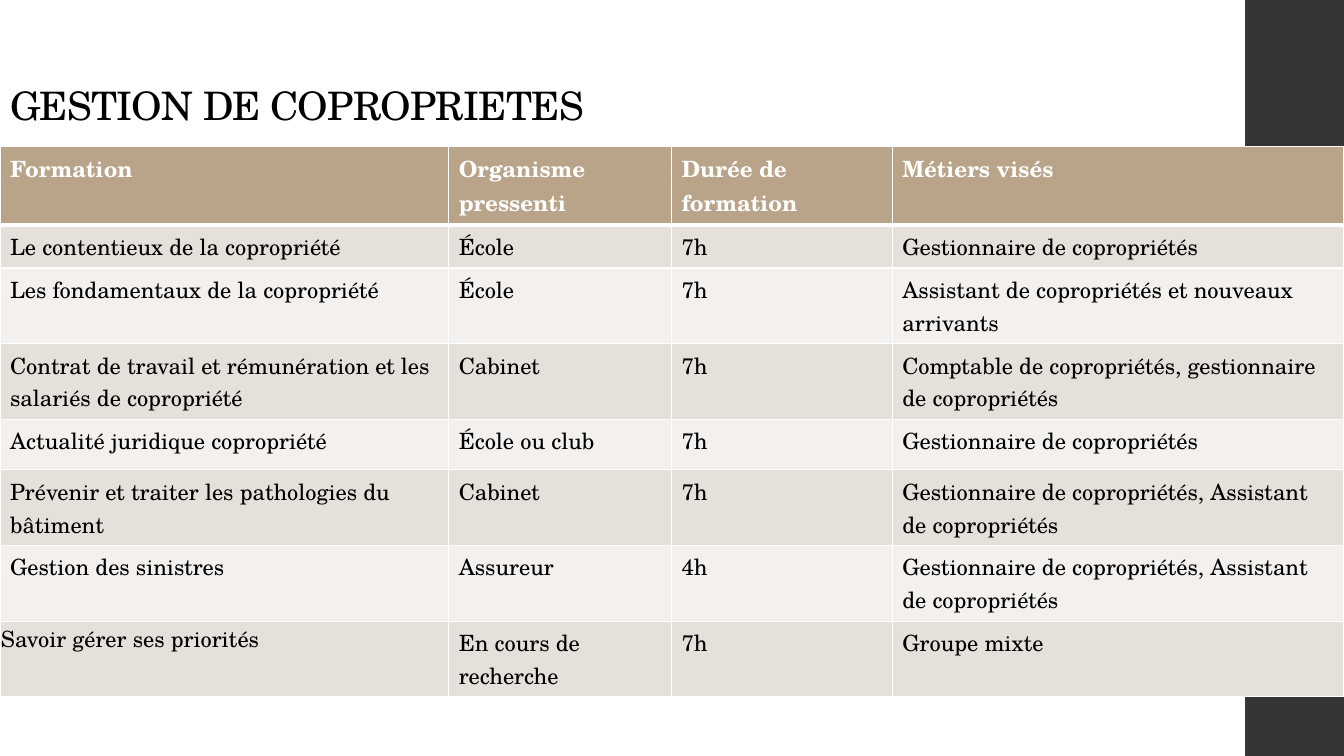
from dataclasses import dataclass

from lxml.etree import SubElement
from pptx import Presentation
from pptx.dml.color import RGBColor
from pptx.enum.shapes import MSO_SHAPE
from pptx.enum.text import MSO_ANCHOR, MSO_AUTO_SIZE, PP_ALIGN
from pptx.oxml import parse_xml
from pptx.oxml.ns import nsdecls, qn
from pptx.slide import Slide
from pptx.table import _Cell
from pptx.text.text import Font
from pptx.util import Inches, Pt

FONT_NAME = "TeX Gyre Schola"
WHITE, BLACK, CHARCOAL = "FFFFFF", "000000", "353537"
HEADER_FILL = "B9A489"
BAND_FILLS = ("E6E0DA", "F3F0ED")
COLUMN_WIDTHS = (4.45, 2.21, 2.19, 4.48)
ROW_HEIGHTS = (0.57, 0.29, 0.29, 0.5, 0.5, 0.5, 0.5, 0.5)


@dataclass(frozen=True)
class Training:
    name: str
    provider: str
    duration: str
    audience: str

    def cells(self) -> tuple[str, ...]:
        return self.name, self.provider, self.duration, self.audience


HEADINGS = Training("Formation", "Organisme pressenti", "Durée de formation", "Métiers visés")
TRAININGS = (
    Training("Le contentieux de la copropriété", "École", "7h", "Gestionnaire de copropriétés"),
    Training("Les fondamentaux de la copropriété", "École", "7h",
             "Assistant de copropriétés et nouveaux arrivants"),
    Training("Contrat de travail et rémunération et les salariés de copropriété", "Cabinet", "7h",
             "Comptable de copropriétés, gestionnaire de copropriétés"),
    Training("Actualité juridique copropriété", "École ou club", "7h",
             "Gestionnaire de copropriétés"),
    Training("Prévenir et traiter les pathologies du bâtiment", "Cabinet", "7h",
             "Gestionnaire de copropriétés, Assistant de copropriétés"),
    Training("Gestion des sinistres", "Assureur", "4h",
             "Gestionnaire de copropriétés, Assistant de copropriétés"),
    Training("Savoir gérer ses priorités", "En cours de recherche", "7h", "Groupe mixte"),
)


def color(value: str) -> RGBColor:
    return RGBColor.from_string(value)


def format_font(font: Font, size: float, font_color: str, bold: bool = False) -> None:
    font.name = FONT_NAME
    font.size = Pt(size)
    font.bold = bold
    font.color.rgb = color(font_color)


def add_side_band(slide: Slide) -> None:
    band = slide.shapes.add_shape(
        MSO_SHAPE.RECTANGLE, Inches(12.35), Inches(0), Inches(0.98), Inches(7.5))
    band.shadow.inherit = False
    band.fill.solid()
    band.fill.fore_color.rgb = color(CHARCOAL)
    band.line.fill.background()


def fill_title(slide: Slide) -> None:
    title = slide.shapes.title
    title.left, title.top = Inches(0), Inches(0.18)
    title.width, title.height = Inches(10.5), Inches(1.15)
    frame = title.text_frame
    frame.text = "GESTION DE COPROPRIETES"
    frame.word_wrap = True
    frame.auto_size = MSO_AUTO_SIZE.NONE
    frame.vertical_anchor = MSO_ANCHOR.BOTTOM
    paragraph = frame.paragraphs[0]
    paragraph.alignment = PP_ALIGN.LEFT
    paragraph.line_spacing = 0.9
    format_font(paragraph.font, 28, BLACK)
    # Letter spacing in hundredths of a point
    paragraph.runs[0].font._element.set("spc", "-50")


def set_borders(cell: _Cell, bottom_width: float) -> None:
    properties = cell._tc.get_or_add_tcPr()
    widths = {"lnL": 1, "lnR": 1, "lnT": 1, "lnB": bottom_width}
    for position, (tag, width) in enumerate(widths.items()):
        border = parse_xml(f'<a:{tag} {nsdecls("a")} w="{Pt(width)}"/>')
        fill = SubElement(border, qn("a:solidFill"))
        SubElement(fill, qn("a:srgbClr"), val=WHITE)
        properties.insert(position, border)


def fill_cell(cell: _Cell, text: str, background: str, is_header: bool) -> None:
    cell.text = text
    cell.fill.solid()
    cell.fill.fore_color.rgb = color(background)
    set_borders(cell, 3 if is_header else 1)
    format_font(cell.text_frame.paragraphs[0].font, 16, WHITE if is_header else BLACK, is_header)


def add_training_table(slide: Slide) -> None:
    rows = (HEADINGS, *TRAININGS)
    table_frame = slide.shapes.add_table(
        len(rows), len(COLUMN_WIDTHS), Inches(0), Inches(1.45), Inches(13.33), Inches(4.67))
    table = table_frame.table
    for column, width in zip(table.columns, COLUMN_WIDTHS):
        column.width = Inches(width)
    for row, height in zip(table.rows, ROW_HEIGHTS):
        row.height = Inches(height)
    for row_index, training in enumerate(rows):
        is_header = row_index == 0
        background = HEADER_FILL if is_header else BAND_FILLS[(row_index - 1) % 2]
        for column_index, text in enumerate(training.cells()):
            fill_cell(table.cell(row_index, column_index), text, background, is_header)

    # The last training name sits tight in its cell
    last_name = table.cell(len(rows) - 1, 0)
    last_name.margin_left = last_name.margin_top = last_name.margin_right = Inches(0.01)
    last_name.margin_bottom = Inches(0.05)
    table_frame.height = Inches(4.67)


def main() -> None:
    presentation = Presentation()
    presentation.slide_width, presentation.slide_height = Inches(13.33), Inches(7.5)
    slide = presentation.slides.add_slide(presentation.slide_layouts[5])
    add_side_band(slide)
    fill_title(slide)
    add_training_table(slide)
    presentation.save("out.pptx")


if __name__ == "__main__":
    main()
